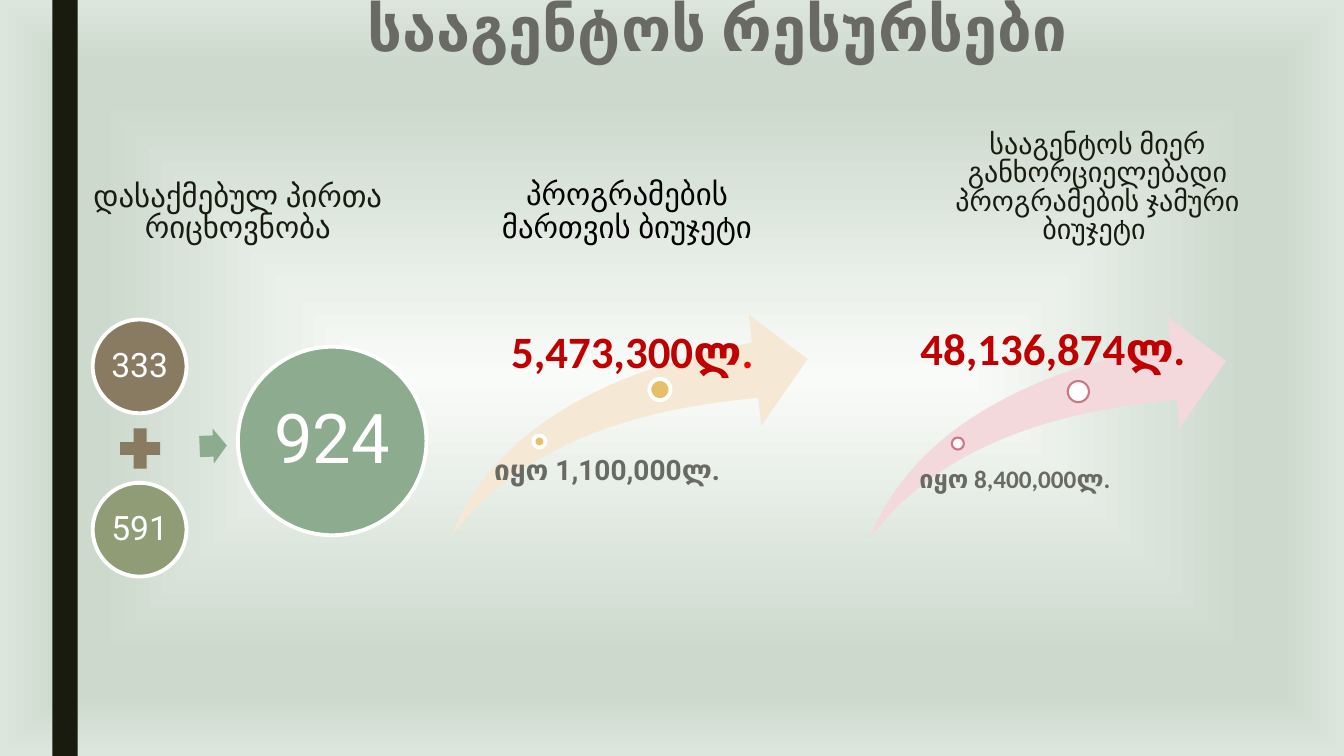
from dataclasses import dataclass

from lxml import etree
from pptx import Presentation
from pptx.dml.color import RGBColor
from pptx.enum.shapes import MSO_SHAPE
from pptx.enum.text import MSO_ANCHOR, PP_ALIGN
from pptx.util import Inches, Pt

RECT, OVAL = MSO_SHAPE.RECTANGLE, MSO_SHAPE.OVAL
PLUS, ARROW, SWOOSH = MSO_SHAPE.MATH_PLUS, MSO_SHAPE.RIGHT_ARROW, MSO_SHAPE.SWOOSH_ARROW
TOP, MIDDLE, BOTTOM = MSO_ANCHOR.TOP, MSO_ANCHOR.MIDDLE, MSO_ANCHOR.BOTTOM
LEFT, CENTER = PP_ALIGN.LEFT, PP_ALIGN.CENTER
NS = "http://schemas.openxmlformats.org/drawingml/2006/main"


@dataclass(frozen=True)
class Theme:
    sans: str = "Roboto"
    figure: str = "Calibri"
    dark: str = "191B0E"
    black: str = "000000"
    gray: str = "696A64"
    white: str = "FFFFFF"
    brown: str = "897B61"
    olive: str = "8F9C75"
    green: str = "8DAB8E"
    sand: str = "F5E8D4"
    gold: str = "E6C069"
    blush: str = "F4D9DC"
    rose: str = "CD7786"
    crimson: str = "C00000"
    red: str = "FF0000"
    backdrop: tuple = ((0, "F9FBF9"), (74, "CCD9CC"), (83, "CCD9CC"), (100, "DDE6DD"))
    title: float = 44
    heading: float = 22
    small_heading: float = 20
    count: float = 24
    total: float = 49
    amount: float = 32
    thick: float = 2.75
    thin: float = 1.5


T = Theme()


@dataclass(frozen=True)
class Box:
    left: float
    top: float
    width: float
    height: float

    def emu(self) -> tuple:
        return tuple(Inches(v) for v in (self.left, self.top, self.width, self.height))


@dataclass(frozen=True)
class Style:
    size: float
    color: str
    font: str = T.sans
    bold: bool = False
    align: PP_ALIGN = CENTER
    anchor: MSO_ANCHOR = BOTTOM
    spacing: float = 0.9
    insets: tuple = (0.1, 0.05, 0.1, 0.05)
    wrap: bool = True


@dataclass(frozen=True)
class Label:
    box: Box
    text: str
    style: Style


@dataclass(frozen=True)
class Count:
    box: Box
    text: str
    fill: str
    size: float
    inset: float


@dataclass(frozen=True)
class Growth:
    left: float
    top: float
    fill: str
    dot_fill: str
    dot_line: str
    dot_width: float
    before: Label
    now: Label
    ending: str


def set_background(slide) -> None:
    fill = slide.background.fill
    fill.gradient()
    grad = slide.background._cSld.find(f".//{{{NS}}}gradFill")
    for child in list(grad):
        grad.remove(child)
    stops = "".join(
        f'<a:gs pos="{pos * 1000}"><a:srgbClr val="{color}"/></a:gs>' for pos, color in T.backdrop
    )
    xml = (
        f'<a:g xmlns:a="{NS}"><a:gsLst>{stops}</a:gsLst><a:path path="shape">'
        '<a:fillToRect l="50000" t="50000" r="50000" b="50000"/></a:path></a:g>'
    )
    for child in list(etree.fromstring(xml)):
        grad.append(child)


def add_shape(slide, kind: MSO_SHAPE, box: Box, fill: str, line: str = "", width: float = 0):
    sp = slide.shapes.add_shape(kind, *box.emu())
    sp.shadow.inherit = False
    sp.fill.solid()
    sp.fill.fore_color.rgb = RGBColor.from_string(fill)
    if line:
        sp.line.color.rgb = RGBColor.from_string(line)
        sp.line.width = Pt(width)
    else:
        sp.line.fill.background()
    return sp


def write(sp, text: str, style: Style):
    tf = sp.text_frame
    tf.word_wrap = style.wrap
    tf.vertical_anchor = style.anchor
    tf.margin_left, tf.margin_top, tf.margin_right, tf.margin_bottom = map(Inches, style.insets)
    p = tf.paragraphs[0]
    p.alignment = style.align
    p.line_spacing = style.spacing
    p.font.name = style.font
    p.font.size = Pt(style.size)
    p.font.bold = style.bold
    p.font.color.rgb = RGBColor.from_string(style.color)
    p.add_run().text = text
    return p


def add_label(slide, label: Label):
    return write(slide.shapes.add_textbox(*label.box.emu()), label.text, label.style)


def add_count(slide, count: Count) -> None:
    sp = add_shape(slide, OVAL, count.box, count.fill, T.white, T.thick)
    style = Style(count.size, T.white, anchor=MIDDLE, insets=(count.inset,) * 4, wrap=False)
    write(sp, count.text, style)


def add_growth(slide, growth: Growth) -> None:
    swoosh = add_shape(slide, SWOOSH, Box(growth.left, growth.top, 3.54, 2.21), growth.fill)
    swoosh.adjustments[0] = swoosh.adjustments[1] = 0.25
    for dx, dy, size in ((0.82, 1.2, 0.12), (1.97, 0.64, 0.21)):
        dot = Box(growth.left + dx, growth.top + dy, size, size)
        add_shape(slide, OVAL, dot, growth.dot_fill, growth.dot_line, growth.dot_width)
    add_label(slide, growth.before)
    p = add_label(slide, growth.now)
    if growth.ending:
        r = p.add_run()
        r.text = growth.ending
        r.font.color.rgb = RGBColor.from_string(T.red)


def before_style(size: float, font: str) -> Style:
    return Style(size, T.gray, font, True, LEFT, TOP, insets=(0.07, 0, 0, 0))


AMOUNT = Style(T.amount, T.crimson, T.figure, True, LEFT, TOP, insets=(0.11, 0, 0, 0))

LABELS = (
    Label(Box(2.1, -0.06, 10.19, 1.11), "სააგენტოს რესურსები ",
          Style(T.title, T.gray, bold=True, anchor=TOP, spacing=0.89)),
    Label(Box(0.72, 1.58, 3.28, 0.9), "დასაქმებულ პირთა რიცხოვნობა",
          Style(T.heading, T.dark, spacing=0.84)),
    Label(Box(4.7, 1.58, 3.04, 0.9), "პროგრამების მართვის ბიუჯეტი",
          Style(T.heading, T.black)),
    Label(Box(8.87, 1.58, 4.03, 0.9),
          "სააგენტოს მიერ განხორციელებადი პროგრამების ჯამური ბიუჯეტი ",
          Style(T.small_heading, T.dark, spacing=0.84)),
)
COUNTS = (
    Count(Box(0.92, 3.17, 0.93, 0.93), "333", T.brown, T.count, 0.03),
    Count(Box(0.92, 4.79, 0.93, 0.93), "591", T.olive, T.count, 0.03),
    Count(Box(2.36, 3.44, 1.87, 1.87), "924", T.green, T.total, 0.07),
)
GROWTHS = (
    Growth(8.62, 3.14, T.blush, T.white, T.rose, T.thin,
           Label(Box(9.05, 4.63, 2.3, 0.95), "იყო 8,400,000ლ.", before_style(18, T.figure)),
           Label(Box(9.02, 3.24, 3.37, 0.86), "48,136,874ლ.", AMOUNT), ""),
    Growth(4.47, 3.12, T.sand, T.gold, T.white, T.thick,
           Label(Box(4.83, 4.53, 2.91, 0.95), "იყო 1,100,000ლ.", before_style(20, T.sans)),
           Label(Box(4.96, 3.27, 3.13, 0.47), "5,473,300ლ", AMOUNT), "."),
)


def main() -> None:
    prs = Presentation()
    prs.slide_width, prs.slide_height = Inches(13.33), Inches(7.5)
    s = prs.slides.add_slide(prs.slide_layouts[6])
    set_background(s)
    add_shape(s, RECT, Box(0.52, 0, 0.25, 7.5), T.dark)
    for label in LABELS:
        add_label(s, label)
    for count in COUNTS:
        add_count(s, count)
    add_shape(s, PLUS, Box(1.12, 4.18, 0.54, 0.54), T.brown)
    arrow = add_shape(s, ARROW, Box(1.98, 4.25, 0.27, 0.35), T.green)
    arrow.adjustments[0] = 0.6
    arrow.rotation = 357.9
    for growth in GROWTHS:
        add_growth(s, growth)
    prs.save("out.pptx")


if __name__ == "__main__":
    main()
